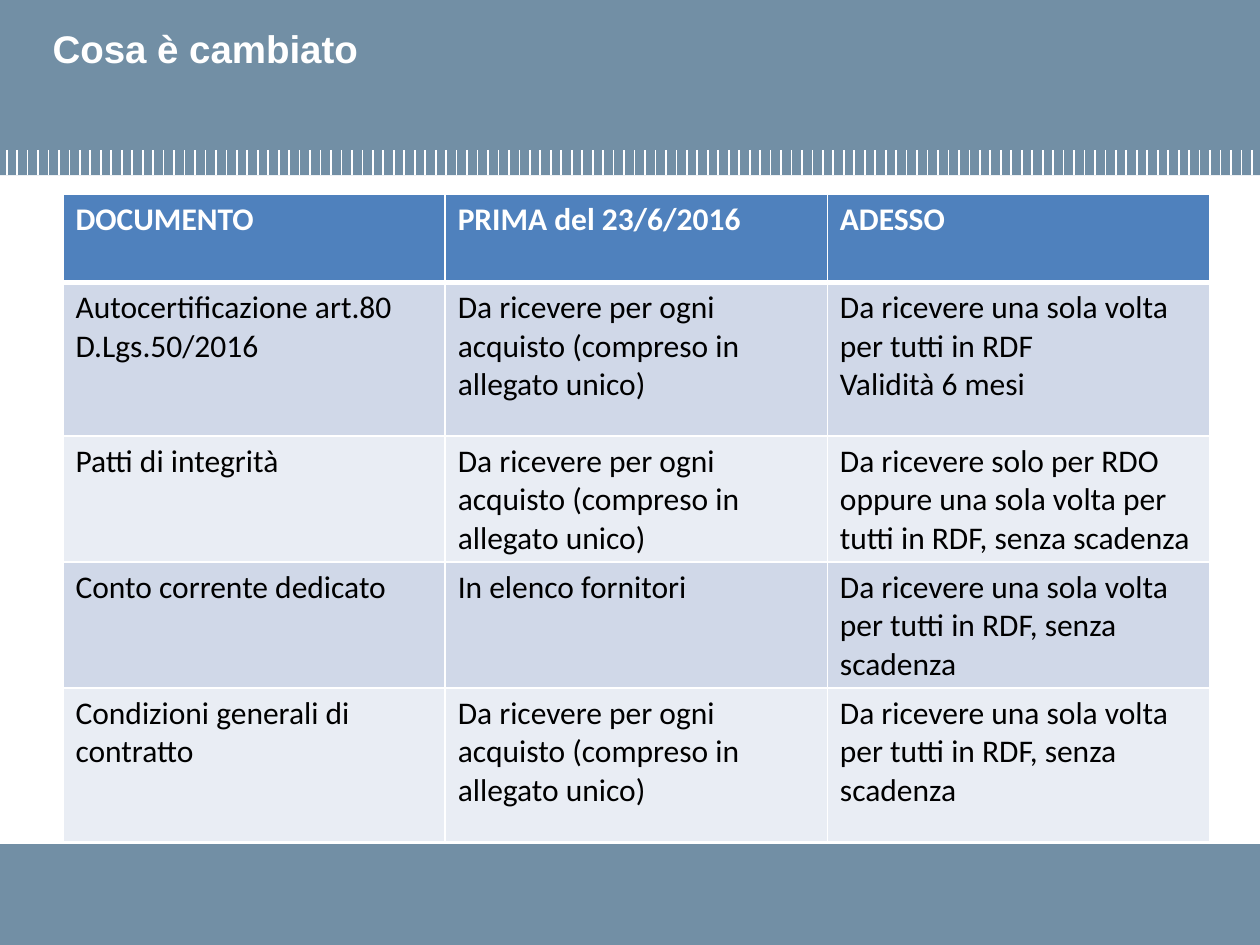
from lxml import etree
from pptx import Presentation
from pptx.dml.color import RGBColor
from pptx.enum.shapes import MSO_CONNECTOR, MSO_SHAPE
from pptx.enum.text import MSO_ANCHOR, PP_ALIGN
from pptx.oxml.ns import qn
from pptx.util import Pt

RECT = MSO_SHAPE.RECTANGLE
LINE = MSO_CONNECTOR.STRAIGHT
TOP = MSO_ANCHOR.TOP
LEFT = PP_ALIGN.LEFT

HUES = {
    "band": "728FA5",
    "white": "FFFFFF",
    "black": "000000",
    "head": "4F81BD",
    "odd": "D0D8E8",
    "even": "E9EDF4",
}
WIDE, HIGH = 720, 540
BAND = 100.08
FOOT = 57.6
TICKS, FIRST, STEP = 120, 3.8, 5.98
TICK = 14.4

EACH = "Da ricevere per ogni acquisto (compreso in allegato unico)"
ONCE = "Da ricevere una sola volta per tutti in RDF"
EVER = ONCE + ", senza scadenza"
ROWS = [
    ("DOCUMENTO", "PRIMA del 23/6/2016", "ADESSO"),
    ("Autocertificazione art.80 D.Lgs.50/2016", EACH, ONCE + "\nValidità 6 mesi"),
    ("Patti di integrità", EACH,
     "Da ricevere solo per RDO oppure una sola volta per tutti in RDF, senza scadenza"),
    ("Conto corrente dedicato", "In elenco fornitori", EVER),
    ("Condizioni generali di contratto", EACH, EVER),
]
TALL = [50.4, 87.84, 69.84, 69.84, 87.84]


class Deck:
    def __init__(self, slide):
        self.slide = slide
        self.shapes = slide.shapes

    def hue(self, name):
        return RGBColor.from_string(HUES[name])

    def paint(self, item, name):
        item.fill.solid()
        item.fill.fore_color.rgb = self.hue(name)

    def label(self, frame, text, face, size, name, bold):
        frame.text = text
        frame.word_wrap = True
        for para in frame.paragraphs:
            para.alignment = LEFT
            for run in para.runs:
                run.font.name = face
                run.font.size = Pt(size)
                run.font.bold = bold
                run.font.color.rgb = self.hue(name)

    def band(self, top, tall):
        box = self.shapes.add_shape(RECT, 0, Pt(top), Pt(WIDE), Pt(tall))
        box.shadow.inherit = False
        self.paint(box, "band")
        box.line.fill.background()

    def tick(self, left, top, base):
        line = self.shapes.add_connector(LINE, Pt(left), Pt(top), Pt(left), Pt(base))
        line.line.color.rgb = self.hue("white")
        line.line.width = Pt(1)
        etree.SubElement(line._element.spPr, qn("a:effectLst"))

    def title(self, text, left, top, wide, tall):
        box = self.shapes.add_textbox(Pt(left), Pt(top), Pt(wide), Pt(tall))
        box.text_frame.vertical_anchor = TOP
        self.label(box.text_frame, text, "Arial", 22, "white", True)

    def edge(self, cell, sizes):
        props = cell._tc.get_or_add_tcPr()
        for spot, (side, size) in enumerate(sizes.items()):
            line = etree.Element(qn("a:ln" + side), w=str(Pt(size)))
            fill = etree.SubElement(line, qn("a:solidFill"))
            etree.SubElement(fill, qn("a:srgbClr"), val=HUES["white"])
            props.insert(spot, line)

    def table(self, rows, left, top, wide, tall):
        cols = len(rows[0])
        grid = self.shapes.add_table(
            len(rows), cols, Pt(left), Pt(top), Pt(wide), Pt(sum(tall))).table
        grid.horz_banding = False
        for col in grid.columns:
            col.width = Pt(wide / cols)
        for i, texts in enumerate(rows):
            grid.rows[i].height = Pt(tall[i])
            head = i == 0
            fill = "head" if head else "odd" if i % 2 else "even"
            ink = "white" if head else "black"
            sizes = {"L": 1, "R": 1, "T": 3 if i == 1 else 1, "B": 3 if head else 1}
            for j, text in enumerate(texts):
                cell = grid.cell(i, j)
                self.paint(cell, fill)
                self.label(cell.text_frame, text, "Calibri", 18, ink, head)
                self.edge(cell, sizes)


def main():
    show = Presentation()
    show.slide_width, show.slide_height = Pt(WIDE), Pt(HIGH)
    deck = Deck(show.slides.add_slide(show.slide_layouts[6]))
    deck.band(0, BAND)
    deck.band(HIGH - FOOT, FOOT)
    for i in range(TICKS):
        deck.tick(FIRST + i * STEP, BAND - TICK, BAND)
    deck.title("Cosa è cambiato", 23, 10.8, 675.4, 66.2)
    deck.table(ROWS, 36, 111, 655.2, TALL)
    show.save("out.pptx")


if __name__ == "__main__":
    main()
